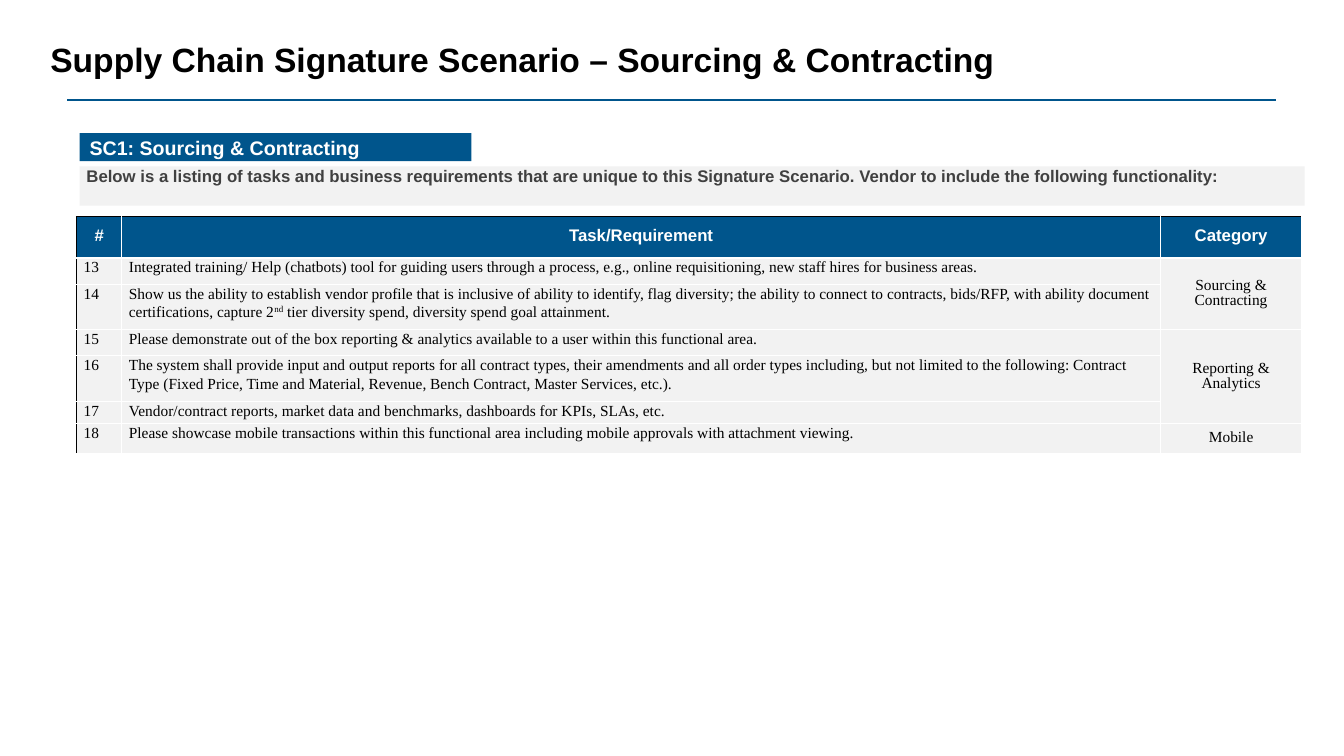
from lxml import etree
from pptx import Presentation
from pptx.dml.color import RGBColor
from pptx.enum.shapes import MSO_CONNECTOR, MSO_SHAPE
from pptx.enum.text import MSO_ANCHOR, PP_ALIGN
from pptx.oxml.ns import qn
from pptx.util import Inches, Pt

TITLE = "Supply Chain Signature Scenario – Sourcing & Contracting"
SECTION = "SC1: Sourcing & Contracting"
INTRO = ("Below is a listing of tasks and business requirements that are unique to this "
         "Signature Scenario. Vendor to include the following functionality:")
HEADERS = ["#", "Task/Requirement", "Category"]
FIRST_NUMBER = 13
TASKS = [
    ["Integrated training/ Help (chatbots) tool for guiding users through a process, e.g., "
     "online requisitioning, new staff hires for business areas."],
    ["Show us the ability to establish vendor profile that is inclusive of ability to identify, "
     "flag diversity; the ability to connect to contracts, bids/RFP, with ability document "
     "certifications, capture 2", "nd",
     " tier diversity spend, diversity spend goal attainment."],
    ["Please demonstrate out of the box reporting & analytics available to a user within this "
     "functional area."],
    ["The system shall provide input and output reports for all contract types, their amendments "
     "and all order types including, but not limited to the following: Contract Type (Fixed "
     "Price, Time and Material, Revenue, Bench Contract, Master Services, etc.)."],
    ["Vendor/contract reports, market data and benchmarks, dashboards for KPIs, SLAs, etc."],
    ["Please showcase mobile transactions within this functional area including mobile approvals "
     "with attachment viewing."],
]
CATEGORIES = [("Sourcing & Contracting", 2), ("Reporting & Analytics", 3), ("Mobile", 1)]
COLUMN_WIDTHS = [0.45, 10.31, 1.4]
ROW_HEIGHTS = [0.41, 0.26, 0.45, 0.26, 0.45, 0.22, 0.3]

BLUE = RGBColor(0x00, 0x55, 0x8C)
LIGHT_GRAY = RGBColor(0xF2, 0xF2, 0xF2)
DARK_GRAY = RGBColor(0x40, 0x40, 0x40)
WHITE = RGBColor(0xFF, 0xFF, 0xFF)
BLACK = RGBColor(0x00, 0x00, 0x00)
SANS, SERIF = "Arial", "Times New Roman"
LEFT, CENTER = PP_ALIGN.LEFT, PP_ALIGN.CENTER
TOP, MIDDLE = MSO_ANCHOR.TOP, MSO_ANCHOR.MIDDLE


def format_paragraph(paragraph, size, name, color, bold, alignment=LEFT):
    paragraph.alignment = alignment
    font = paragraph.font
    font.size, font.name, font.bold = Pt(size), name, bold
    font.color.rgb = color


def add_box(slide, left, top, width, height, color):
    box = slide.shapes.add_shape(MSO_SHAPE.RECTANGLE, Inches(left), Inches(top),
                                 Inches(width), Inches(height))
    box.shadow.inherit = False
    box.fill.solid()
    box.fill.fore_color.rgb = color
    box.line.fill.background()
    return box


def set_borders(cell, colors):
    properties = cell._tc.get_or_add_tcPr()
    for index, (side, color) in enumerate(zip("LRTB", colors)):
        line = etree.Element(qn(f"a:ln{side}"), w=str(Pt(1)))
        fill = etree.SubElement(line, qn("a:solidFill"))
        etree.SubElement(fill, qn("a:srgbClr"), val=str(color))
        properties.insert(index, line)


def set_margins(cell, horizontal, vertical):
    cell.margin_left = cell.margin_right = Inches(horizontal)
    cell.margin_top = cell.margin_bottom = Inches(vertical)


def fill_header(cell, text):
    cell.text = text
    cell.vertical_anchor = MIDDLE
    set_margins(cell, 0.05, 0.05)
    paragraph = cell.text_frame.paragraphs[0]
    format_paragraph(paragraph, 12, SANS, WHITE, True, CENTER)
    paragraph.line_spacing = Pt(11)


def fill_task(cell, parts):
    set_margins(cell, 0.07, 0)
    cell.vertical_anchor = TOP
    paragraph = cell.text_frame.paragraphs[0]
    for index, part in enumerate(parts):
        run = paragraph.add_run()
        run.text = part
        if index == 1:
            run._r.get_or_add_rPr().set("baseline", "30000")
    format_paragraph(paragraph, 11, SERIF, BLACK, False)
    paragraph.line_spacing = 1.07


def fill_category(cell, text):
    cell.text = text
    cell.vertical_anchor = MIDDLE
    set_margins(cell, 0.05, 0.05)
    paragraph = cell.text_frame.paragraphs[0]
    format_paragraph(paragraph, 11, SERIF, BLACK, False, CENTER)
    paragraph.line_spacing = Pt(11)


def add_requirements_table(slide):
    table = slide.shapes.add_table(
        len(ROW_HEIGHTS), len(COLUMN_WIDTHS), Inches(0.76), Inches(2.15),
        Inches(sum(COLUMN_WIDTHS)), Inches(sum(ROW_HEIGHTS))).table
    table.first_row = table.horz_banding = False
    for column, width in zip(table.columns, COLUMN_WIDTHS):
        column.width = Inches(width)
    for row_index, height in enumerate(ROW_HEIGHTS):
        table.rows[row_index].height = Inches(height)
        for column_index in range(len(COLUMN_WIDTHS)):
            cell = table.cell(row_index, column_index)
            cell.fill.solid()
            cell.fill.fore_color.rgb = LIGHT_GRAY if row_index else BLUE
            set_borders(cell, (WHITE if column_index else BLACK, WHITE,
                               WHITE if row_index else BLACK, WHITE))
    for column_index, header in enumerate(HEADERS):
        fill_header(table.cell(0, column_index), header)
    for row_index, parts in enumerate(TASKS, 1):
        fill_task(table.cell(row_index, 0), [str(FIRST_NUMBER + row_index - 1)])
        fill_task(table.cell(row_index, 1), parts)
    row_index = 1
    for category, span in CATEGORIES:
        cell = table.cell(row_index, 2)
        if span > 1:
            cell.merge(table.cell(row_index + span - 1, 2))
        fill_category(cell, category)
        row_index += span


def main():
    presentation = Presentation()
    presentation.slide_width, presentation.slide_height = Inches(13.34), Inches(7.5)
    slide = presentation.slides.add_slide(presentation.slide_layouts[5])

    title = slide.shapes.title
    title.left, title.top = Inches(0.4), Inches(0.38)
    title.width, title.height = Inches(12.01), Inches(0.65)
    title.text = TITLE
    title.text_frame.vertical_anchor = TOP
    format_paragraph(title.text_frame.paragraphs[0], 24, SANS, BLACK, True)
    title.text_frame.paragraphs[0].line_spacing = 0.9

    rule = slide.shapes.add_connector(MSO_CONNECTOR.STRAIGHT, Inches(0.67), Inches(0.99),
                                      Inches(12.67), Inches(0.99))
    rule.line.color.rgb = BLUE
    rule.line.width = Pt(1.5)
    etree.SubElement(rule._element.spPr, qn("a:effectLst"))

    add_box(slide, 0.79, 1.65, 12.16, 0.39, LIGHT_GRAY)
    section = add_box(slide, 0.79, 1.32, 3.89, 0.28, BLUE)
    section.text_frame.text = SECTION
    section.text_frame.vertical_anchor = MIDDLE
    format_paragraph(section.text_frame.paragraphs[0], 14, SANS, WHITE, True)

    add_requirements_table(slide)

    intro = slide.shapes.add_textbox(Inches(0.76), Inches(1.6), Inches(12.16), Inches(0.3))
    intro.text_frame.word_wrap = True
    intro.text_frame.text = INTRO
    format_paragraph(intro.text_frame.paragraphs[0], 12, SANS, DARK_GRAY, True)

    presentation.save("out.pptx")


if __name__ == "__main__":
    main()
